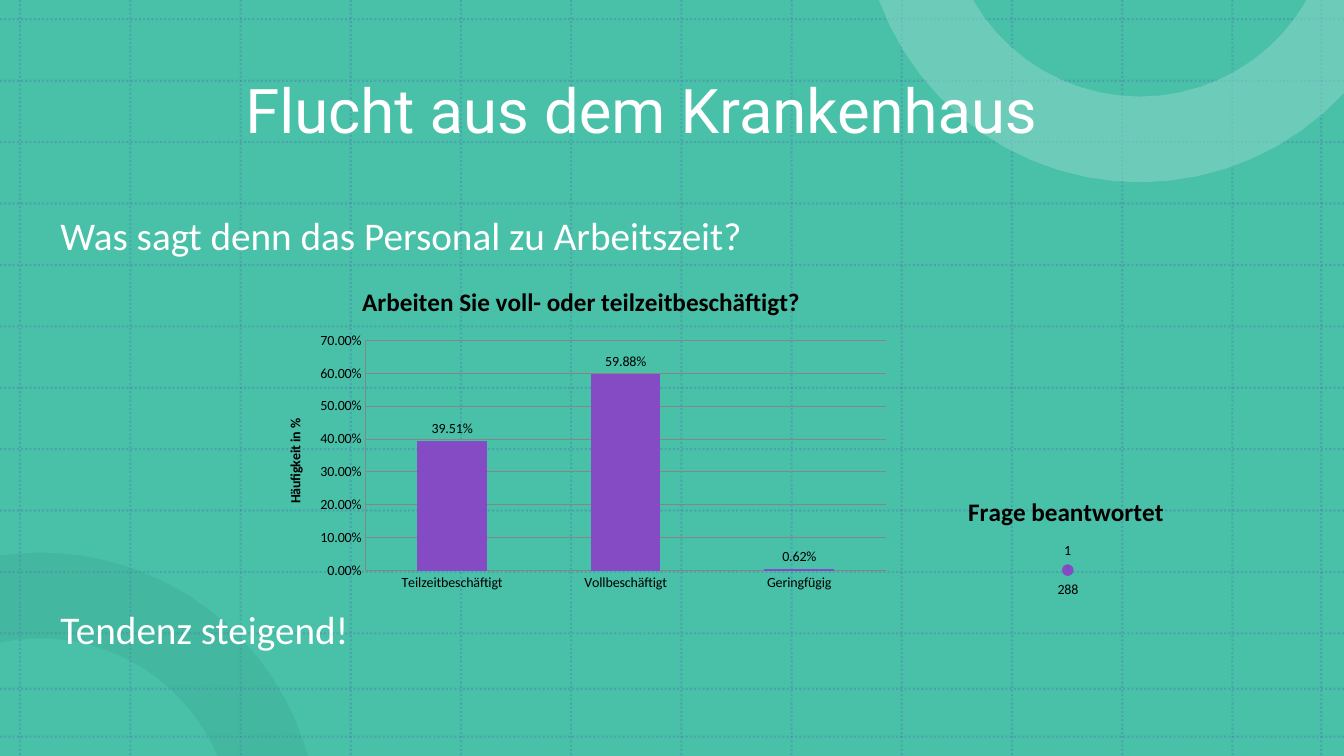
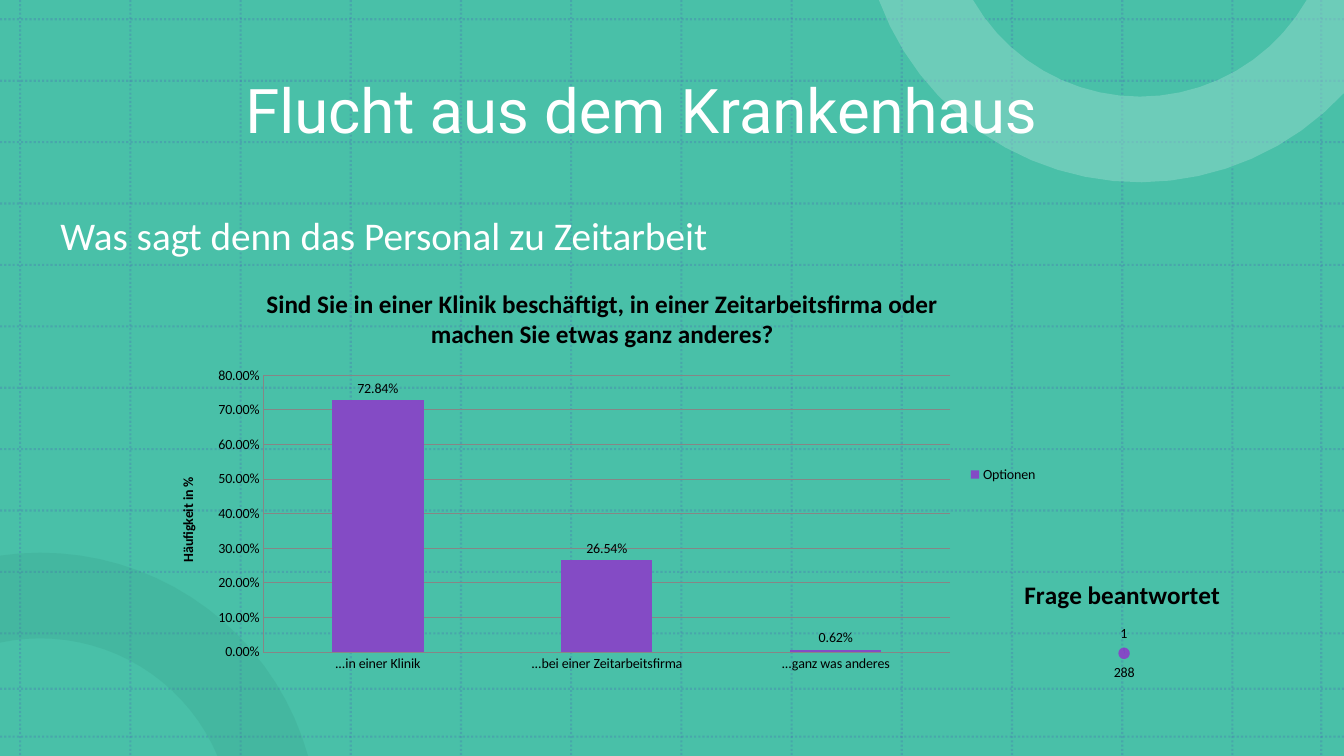
import math

from lxml import etree
from pptx import Presentation
from pptx import util as u
from pptx.chart import data
from pptx.dml import color
from pptx.enum import chart as charts
from pptx.enum import dml, shapes, text
from pptx.oxml import parse_xml
from pptx.oxml.ns import nsdecls, qn

COLUMNS, ROWS = 160, 90
CELL = u.Inches(1) / 12

GREEN, DARK_GREEN, LIGHT_GREEN = "49C0A8", "339480", "92D9CB"
PURPLE, INDIGO = "844BC5", "4842B7"
WHITE, BLACK, GREY = "FFFFFF", "000000", "868686"
TITLE_FONT, BODY_FONT = "Roboto", "Calibri"
RING_OUTER, RING_INNER, ARC_STEPS = 33.1, 22.9, 20


def rgb(hex_string):
    return color.RGBColor.from_string(hex_string)


def cells(*counts):
    return [u.Emu(round(count * CELL)) for count in counts]


def arc(centre, radius, start, end):
    turns = [math.radians(start + (end - start) * step / ARC_STEPS)
             for step in range(ARC_STEPS + 1)]
    return [(centre[0] + radius * math.cos(turn), centre[1] + radius * math.sin(turn))
            for turn in turns]


def set_opacity(element, percent):
    for paint in element.xpath(".//p:spPr//a:srgbClr"):
        etree.SubElement(paint, qn("a:alpha")).set("val", str(percent * 1000))


class Deck:
    def __init__(self):
        self.deck = Presentation()
        self.deck.slide_width, self.deck.slide_height = cells(COLUMNS, ROWS)
        self.layout = self.deck.slide_layouts[5]
        self.page = None

    def start_page(self, heading):
        self.page = self.deck.slides.add_slide(self.layout)
        title = self.page.shapes.title
        title.left, title.top, title.width, title.height = cells(6, 4.8, 140.8, 17.4)
        title.text_frame.text = heading
        title.text_frame.vertical_anchor = text.MSO_ANCHOR.MIDDLE
        para = title.text_frame.paragraphs[0]
        para.alignment = text.PP_ALIGN.CENTER
        para.line_spacing = 0.9
        self.style(para.runs[0].font, 44, WHITE, name=TITLE_FONT)

    def style(self, font, size, hex_string, name=BODY_FONT, bold=False):
        font.name, font.size, font.bold = name, u.Pt(size), bold
        font.color.rgb = rgb(hex_string)

    def decorate_layout(self):
        self.layout.background.fill.solid()
        self.layout.background.fill.fore_color.rgb = rgb(GREEN)
        group = self.page.shapes.add_group_shape()
        for row in [2.3 + 7.31 * step for step in range(11)] + [82, 87.7]:
            self.grid_line(group, 0, row, COLUMNS, row)
        for column in [2.4 + 13.12 * step for step in range(12)] + [157.3]:
            self.grid_line(group, column, 0, column, ROWS)
        lower, upper = (4.8, 98.9), (135.7, -11.4)
        self.ring(group, arc(lower, RING_OUTER, -98.34, -15.6)
                  + arc(lower, RING_INNER, -22.87, -102.1), DARK_GREEN, 20)
        self.ring(group, arc(upper, RING_OUTER, 159.85, 42.8) + [(COLUMNS, 0)]
                  + arc(upper, RING_INNER, 29.85, 150.15), LIGHT_GREEN, 50)
        for number, item in enumerate(group._element.xpath(".//p:cNvPr"), 100):
            item.set("id", str(number))
        self.layout.shapes._spTree.insert(2, group._element)

    def grid_line(self, group, left, top, right, bottom):
        line = group.shapes.add_connector(
            shapes.MSO_CONNECTOR.STRAIGHT, *cells(left, top, right, bottom))
        line.line.color.rgb = rgb(INDIGO)
        line.line.width = u.Pt(1.5)
        line.line.dash_style = dml.MSO_LINE.ROUND_DOT
        set_opacity(line._element, 20)
        etree.SubElement(line._element.spPr, qn("a:effectLst"))

    def ring(self, group, corners, hex_string, opacity):
        points = [cells(*corner) for corner in corners]
        outline = group.shapes.build_freeform(*points[0])
        outline.add_line_segments(points[1:], close=True)
        shape = outline.convert_to_shape()
        shape.shadow.inherit = False
        shape.fill.solid()
        shape.fill.fore_color.rgb = rgb(hex_string)
        shape.line.fill.background()
        set_opacity(shape._element, opacity)

    def statement(self, row, words):
        box = self.page.shapes.add_textbox(*cells(6, row, 140.8, 8))
        box.text_frame.word_wrap = True
        box.text_frame.text = words
        para = box.text_frame.paragraphs[0]
        para.line_spacing = 1.1
        self.style(para.runs[0].font, 28, WHITE)

    def chart(self, kind, area, plot_share, heading, categories, name, values, number_format):
        numbers = data.CategoryChartData(number_format=number_format)
        numbers.categories = categories
        numbers.add_series(name, values)
        chart = self.page.shapes.add_chart(kind, *cells(*area), numbers).chart
        self.style(chart.font, 10, BLACK)
        chart.has_legend = False
        chart.has_title = True
        self.caption(chart.chart_title, heading, 18)
        self.place_plot(chart, plot_share)
        plot = chart.plots[0]
        plot.has_data_labels = True
        labels = plot.data_labels
        labels.show_value = True
        labels.number_format = number_format
        labels.number_format_is_linked = False
        labels.position = charts.XL_LABEL_POSITION.OUTSIDE_END
        self.style(labels.font, 10, BLACK)
        return chart

    def caption(self, title, words, size):
        title.text_frame.text = words
        self.style(title.text_frame.paragraphs[0].runs[0].font, size, BLACK, bold=True)

    def place_plot(self, chart, plot_share):
        area = chart._chartSpace.chart.plotArea
        for old in area.findall(qn("c:layout")):
            area.remove(old)
        values = "".join(f'<c:{tag} val="{share}"/>' for tag, share in zip("xywh", plot_share))
        area.insert(0, parse_xml(
            f'<c:layout {nsdecls("c")}><c:manualLayout><c:layoutTarget val="inner"/>'
            f'<c:xMode val="edge"/><c:yMode val="edge"/>{values}'
            '</c:manualLayout></c:layout>'))

    def column_chart(self, area, plot_share, heading, categories, name, values, top, legend=False):
        chart = self.chart(charts.XL_CHART_TYPE.COLUMN_CLUSTERED, area, plot_share,
                           heading, categories, name, values, "0.00%")
        plot = chart.plots[0]
        plot.gap_width = 150
        plot.vary_by_categories = False
        fill = plot.series[0].format.fill
        fill.solid()
        fill.fore_color.rgb = rgb(PURPLE)
        scale = chart.value_axis
        scale.minimum_scale, scale.maximum_scale, scale.major_unit = 0, top, 0.1
        scale.has_major_gridlines = True
        scale.tick_labels.number_format = "0.00%"
        scale.tick_labels.number_format_is_linked = False
        scale.has_title = True
        self.caption(scale.axis_title, "Häufigkeit in %", 10)
        for axis in (chart.category_axis, scale):
            axis.major_tick_mark = charts.XL_TICK_MARK.NONE
            axis.minor_tick_mark = charts.XL_TICK_MARK.NONE
        for lines in (chart.category_axis, scale, scale.major_gridlines):
            lines.format.line.color.rgb = rgb(GREY)
            lines.format.line.width = u.Pt(0.75)
        if legend:
            chart.has_legend = True
            chart.legend.position = charts.XL_LEGEND_POSITION.RIGHT
            chart.legend.include_in_layout = False
            self.style(chart.legend.font, 10, BLACK)

    def answer_pie(self, column, row):
        words = "Frage beantwortet"
        chart = self.chart(charts.XL_CHART_TYPE.PIE, (column, row, 45.4, 13.8),
                           (0.49, 0.71, 0.03, 0.1), words, ["1", "2"], words, (288, 1), "0")
        for index, hex_string in enumerate((PURPLE, INDIGO)):
            fill = chart.plots[0].series[0].points[index].format.fill
            fill.solid()
            fill.fore_color.rgb = rgb(hex_string)


def main():
    show = Deck()
    heading = "Flucht aus dem Krankenhaus"

    show.start_page(heading)
    show.decorate_layout()
    show.statement(24, "Was sagt denn das Personal zu Arbeitszeit?")
    show.statement(70.9, "Tendenz steigend!")
    show.column_chart(
        (31.4, 31.9, 75.6, 39.2), (0.16, 0.22, 0.82, 0.7),
        "Arbeiten Sie voll- oder teilzeitbeschäftigt?",
        ["Teilzeitbeschäftigt", "Vollbeschäftigt", "Geringfügig"],
        "Series 1", (0.3951, 0.5988, 0.0062), 0.7)
    show.answer_pie(104.2, 57.4)

    show.start_page(heading)
    show.statement(24, "Was sagt denn das Personal zu Zeitarbeit")
    show.answer_pie(110.9, 67.3)
    show.column_chart(
        (18.6, 31.9, 106.2, 49.2), (0.12, 0.26, 0.77, 0.67),
        "Sind Sie in einer Klinik beschäftigt, in einer Zeitarbeitsfirma oder "
        "machen Sie etwas ganz anderes?",
        ["...in einer Klinik", "...bei einer Zeitarbeitsfirma", "...ganz was anderes"],
        "Optionen", (0.7284, 0.2654, 0.0062), 0.8, legend=True)

    show.deck.save("out.pptx")


if __name__ == "__main__":
    main()
